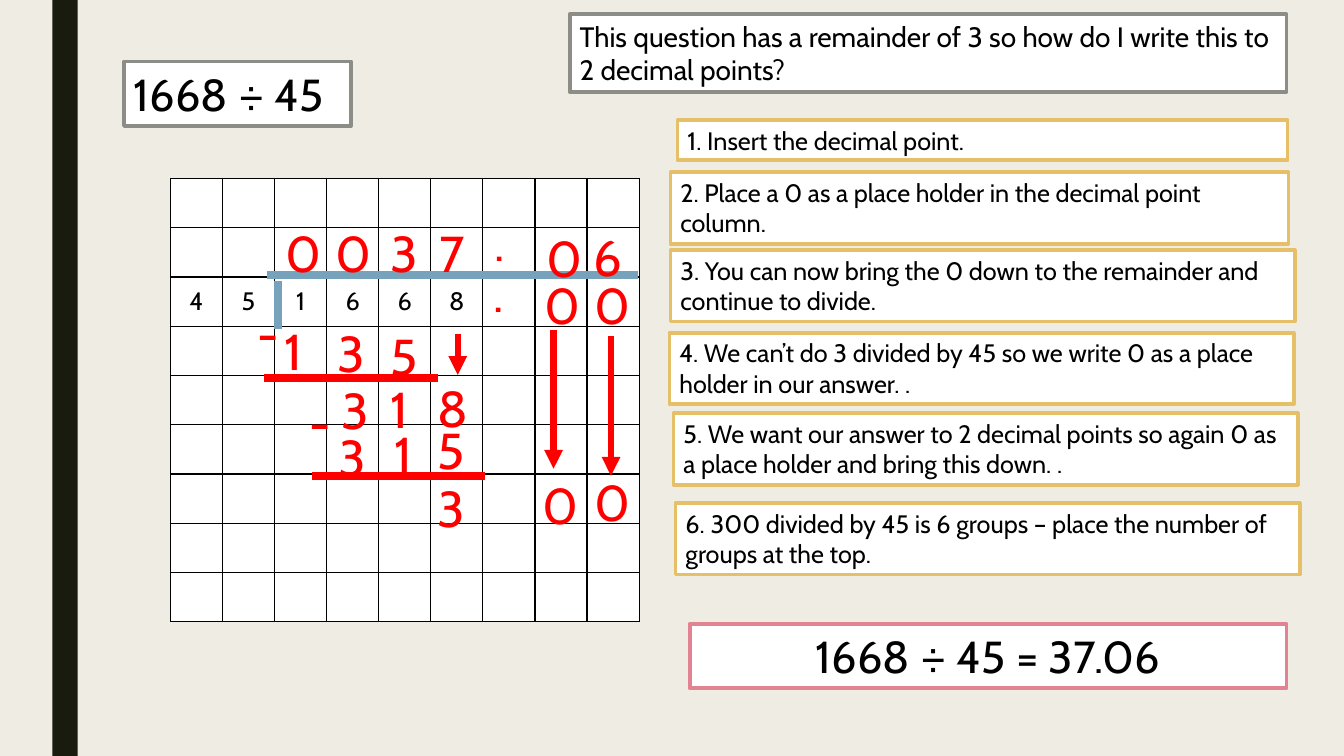
from lxml import etree
from pptx import Presentation
from pptx.dml.color import RGBColor
from pptx.enum.shapes import MSO_CONNECTOR, MSO_SHAPE
from pptx.enum.text import MSO_ANCHOR, MSO_AUTO_SIZE, PP_ALIGN
from pptx.oxml.ns import qn
from pptx.util import Inches, Pt

RECT = MSO_SHAPE.RECTANGLE
LINE = MSO_CONNECTOR.STRAIGHT
TOP, MIDDLE = MSO_ANCHOR.TOP, MSO_ANCHOR.MIDDLE
LEFT, CENTER = PP_ALIGN.LEFT, PP_ALIGN.CENTER
GROW = MSO_AUTO_SIZE.SHAPE_TO_FIT_TEXT

FONT = "Cabin"
COLORS = {
    "paper": "EFEDE3", "side": "191B0E", "white": "FFFFFF", "black": "000000",
    "gray": "8C8D86", "gold": "E6C069", "pink": "E28394",
    "blue": "77A2BB", "red": "FF0000",
}

PANELS = [
    ("1668 ÷ 45", 1.23, 0.61, 2.25, 0.64, "gray", 32, LEFT),
    ("This question has a remainder of 3 so how do I write this to 2 decimal points?",
     5.65, 0.14, 7.11, 0.77, "gray", 20, LEFT),
    ("1668 ÷ 45 = 37.06", 6.84, 6.19, 5.92, 0.64, "pink", 32, CENTER),
]
STEPS = [
    ("1. Insert the decimal point.", 6.72, 1.19, 6.05, 0.4),
    ("2. Place a 0 as a place holder in the decimal point column.", 6.65, 1.71, 6.13, 0.71),
    ("3. You can now bring the 0 down to the remainder and continue to divide.",
     6.65, 2.48, 6.19, 0.71),
    ("4. We can’t do 3 divided by 45 so we write 0 as a place holder in our answer. .",
     6.64, 3.3, 6.19, 0.71),
    ("5. We want our answer to 2 decimal points so again 0 as a place holder and bring this down. .",
     6.68, 4.1, 6.19, 0.71),
    ("6. 300 divided by 45 is 6 groups – place the number of groups at the top.",
     6.7, 4.99, 6.19, 0.71),
]

GRID = (1.69, 1.77, 4.65, 4.4)
SIZE = 9
SUM_ROW = 2
SUM = "451668"

BARS = [
    (2.76, 3.26, 2.76, 2.79, "blue"),
    (2.65, 2.73, 6.33, 2.73, "blue"),
    (2.62, 3.75, 4.34, 3.75, "red"),
    (3.09, 4.72, 4.81, 4.72, "red"),
]
ARROWS = [(4.54, 3.31, 3.72), (5.49, 3.27, 4.65), (6.06, 3.33, 4.72)]
DIGITS = [
    ("0", 2.73, 2.15), ("0", 3.23, 2.15), ("3", 3.78, 2.15), ("7", 4.26, 2.15),
    (".", 4.81, 2.04), ("0", 5.32, 2.2), ("6", 5.79, 2.19),
    (".", 4.8, 2.55), ("0", 5.3, 2.67), ("0", 5.8, 2.67),
    ("-", 2.46, 2.95), ("1", 2.72, 3.13), ("3", 3.25, 3.15), ("5", 3.78, 3.18),
    ("3", 3.29, 3.71), ("1", 3.77, 3.7), ("8", 4.24, 3.69),
    ("-", 2.97, 3.83), ("3", 3.26, 4.18), ("1", 3.81, 4.15), ("5", 4.24, 4.11),
    ("3", 4.24, 4.68), ("0", 5.28, 4.65), ("0", 5.8, 4.62),
]


def rgb(name):
    return RGBColor.from_string(COLORS[name])


def paint(fill, name):
    fill.solid()
    fill.fore_color.rgb = rgb(name)


def write(frame, text, size, color, align=LEFT):
    para = frame.paragraphs[0]
    para.text = text
    para.alignment = align
    para.font.name = FONT
    para.font.size = Pt(size)
    para.font.color.rgb = rgb(color)


def box(slide, left, top, width, height, fill):
    shape = slide.shapes.add_shape(RECT, *map(Inches, (left, top, width, height)))
    shape.shadow.inherit = False
    paint(shape.fill, fill)
    shape.line.fill.background()
    return shape


def panel(slide, text, left, top, width, height, edge, size, align):
    shape = box(slide, left, top, width, height, "white")
    shape.line.color.rgb = rgb(edge)
    shape.line.width = Pt(2.75)
    frame = shape.text_frame
    frame.word_wrap = True
    frame.auto_size = GROW
    frame.vertical_anchor = TOP
    write(frame, text, size, "black", align)


def digit(slide, text, left, top):
    frame = slide.shapes.add_textbox(*map(Inches, (left, top, 0.57, 0.71))).text_frame
    frame.word_wrap = True
    frame.auto_size = GROW
    write(frame, text, 36, "red")


def stroke(slide, x1, y1, x2, y2, color, width, arrow=False):
    line = slide.shapes.add_connector(LINE, *map(Inches, (x1, y1, x2, y2)))
    line.line.color.rgb = rgb(color)
    line.line.width = Pt(width)
    props = line.element.spPr
    etree.SubElement(props, qn("a:effectLst"))
    if arrow:
        etree.SubElement(props.find(qn("a:ln")), qn("a:tailEnd"), type="triangle")


def border(cell):
    props = cell._tc.get_or_add_tcPr()
    for spot, side in enumerate(("lnL", "lnR", "lnT", "lnB")):
        edge = etree.Element(qn(f"a:{side}"), w=str(Pt(1)))
        fill = etree.SubElement(edge, qn("a:solidFill"))
        etree.SubElement(fill, qn("a:srgbClr"), val=COLORS["black"])
        props.insert(spot, edge)


def grid(slide):
    left, top, width, height = map(Inches, GRID)
    table = slide.shapes.add_table(SIZE, SIZE, left, top, width, height).table
    for i in range(SIZE):
        table.columns[i].width = width // SIZE
        table.rows[i].height = height // SIZE
        for j in range(SIZE):
            cell = table.cell(i, j)
            paint(cell.fill, "white")
            border(cell)
            cell.vertical_anchor = MIDDLE
            text = SUM[j:j + 1] if i == SUM_ROW else ""
            write(cell.text_frame, text, 18, "black", CENTER)


def main():
    deck = Presentation()
    deck.slide_width, deck.slide_height = Inches(13.33), Inches(7.5)
    slide = deck.slides.add_slide(deck.slide_layouts[6])
    paint(slide.background.fill, "paper")
    box(slide, 0.52, 0, 0.25, 7.5, "side")
    grid(slide)
    for *ends, color in BARS:
        stroke(slide, *ends, color, 6)
    for x, start, end in ARROWS:
        stroke(slide, x, start, x, end, "red", 4.5, True)
    for item in DIGITS:
        digit(slide, *item)
    for item in PANELS:
        panel(slide, *item)
    for item in STEPS:
        panel(slide, *item, "gold", 18, LEFT)
    deck.save("out.pptx")


if __name__ == "__main__":
    main()
